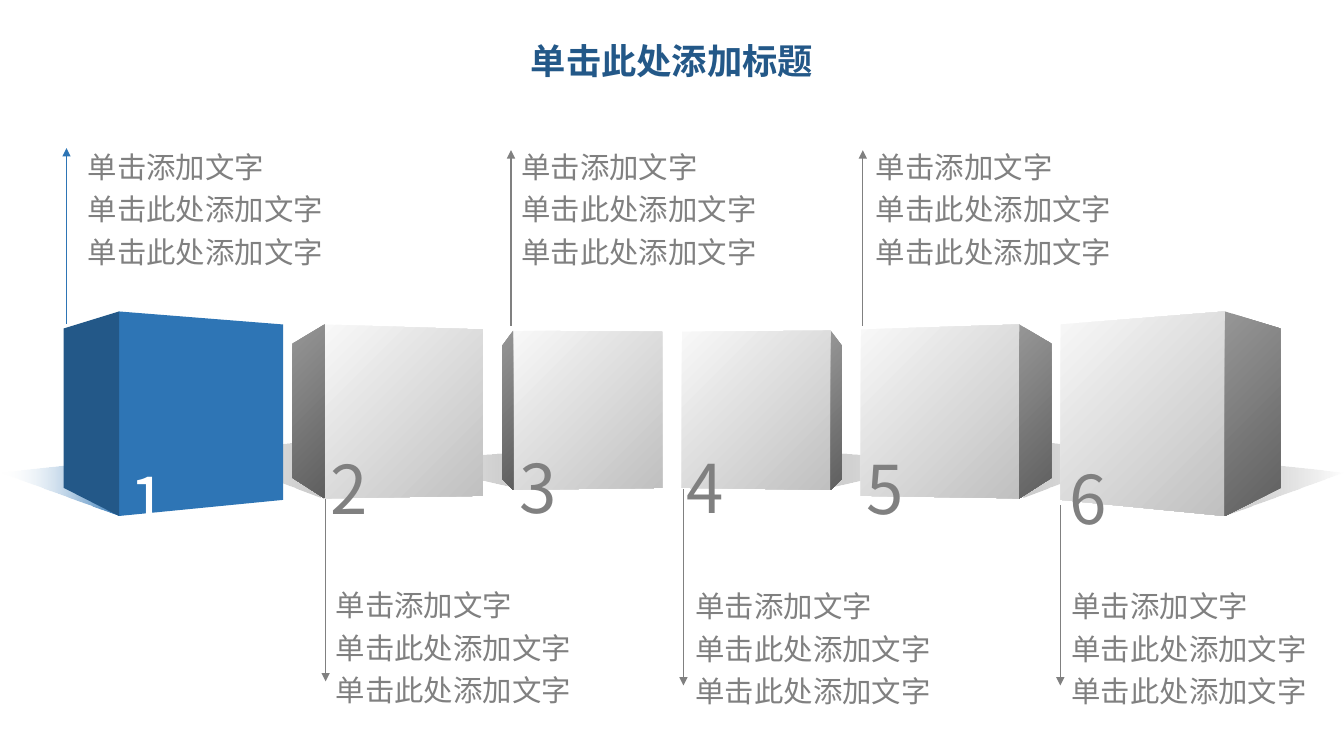
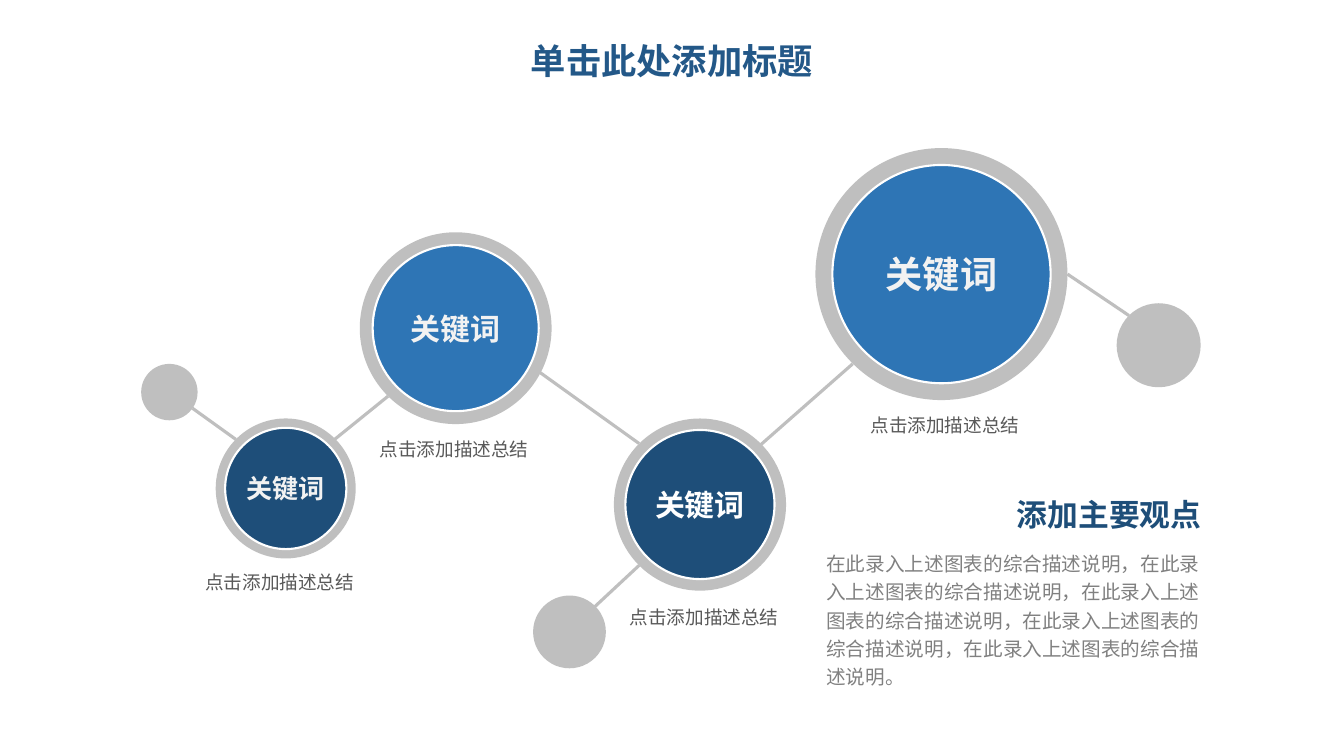
from dataclasses import dataclass
from typing import Any

import pptx
import pptx.dml.color
import pptx.enum.shapes
import pptx.enum.text
import pptx.oxml.ns
import pptx.util
from lxml import etree

Pt = pptx.util.Pt
qn = pptx.oxml.ns.qn
Align = pptx.enum.text.PP_ALIGN
Anchor = pptx.enum.text.MSO_ANCHOR
WIDTH, HEIGHT = 960, 540


@dataclass(frozen=True)
class Theme:
    # Colours
    title: str = "235888"
    blue: str = "2E75B5"
    navy: str = "1E4E79"
    grey: str = "808080"
    caption: str = "595959"
    ring: str = "BFBFBF"
    pale: str = "F2F2F2"
    white: str = "FFFFFF"
    # Gradients: pairs of colour and opacity in percent
    front: tuple = (("F8F8F8", 100), ("C0C0C0", 100))
    side: tuple = (("969696", 100), ("5F5F5F", 100))
    shadow: tuple = (("FFFFFF", 50), ("666666", 34))
    blue_shadow: tuple = (("FFFFFF", 0), ("2E75B5", 100))
    # Fonts and type sizes
    title_font: str = "Montserrat"
    font: str = "Noto Sans CJK SC"
    title_size: float = 25.2
    callout_size: float = 21
    digit_size: float = 48
    caption_size: float = 13.3
    heading_size: float = 22
    body_size: float = 14


THEME = Theme()


def rgb(color):
    return pptx.dml.color.RGBColor.from_string(color)


@dataclass
class Deck:
    presentation: Any
    theme: Theme
    slide: Any = None

    def new_slide(self, title):
        layout = self.presentation.slide_layouts.get_by_name("Title Only")
        self.slide = self.presentation.slides.add_slide(layout)
        shape = self.slide.shapes.title
        shape.left, shape.top, shape.width, shape.height = map(Pt, (66, 26, 828, 37.5))
        self.set_text(shape.text_frame, [title], self.theme.title_size, self.theme.title,
                      bold=True, align=Align.CENTER, spacing=0.9, anchor=Anchor.MIDDLE,
                      font=self.theme.title_font)

    def set_text(self, frame, lines, size, color, bold=False, align=Align.LEFT, spacing=1.0,
                 anchor=Anchor.TOP, insets=(7.2, 3.6), wrap=True, font=None):
        frame.word_wrap = wrap
        frame.auto_size = pptx.enum.text.MSO_AUTO_SIZE.NONE
        frame.vertical_anchor = anchor
        frame.margin_left = frame.margin_right = Pt(insets[0])
        frame.margin_top = frame.margin_bottom = Pt(insets[1])
        for index, line in enumerate(lines):
            paragraph = frame.add_paragraph() if index else frame.paragraphs[0]
            paragraph.alignment = align
            paragraph.line_spacing = spacing
            paragraph.space_before = Pt(0)
            run = paragraph.add_run()
            run.text = line
            run.font.size = Pt(size)
            run.font.bold = bold
            run.font.color.rgb = rgb(color)
            run.font.name = font or self.theme.font
            east_asian = etree.SubElement(run.font._element, qn("a:ea"))
            east_asian.set("typeface", self.theme.font)

    def text(self, left, top, width, height, lines, size, color, **style):
        box = self.slide.shapes.add_textbox(*map(Pt, (left, top, width, height)))
        self.set_text(box.text_frame, lines, size, color, **style)

    def paint(self, shape, fill, angle=45):
        """Fill with a colour, or with a gradient at a clockwise angle."""
        shape.shadow.inherit = False
        shape.line.fill.background()
        if isinstance(fill, str):
            shape.fill.solid()
            shape.fill.fore_color.rgb = rgb(fill)
            return
        shape.fill.gradient()
        shape.fill.gradient_angle = (360 - angle) % 360
        for stop, (color, opacity) in zip(shape.fill.gradient_stops, fill):
            stop.color.rgb = rgb(color)
        for element, (color, opacity) in zip(shape._element.spPr.iter(qn("a:srgbClr")), fill):
            if opacity < 100:
                etree.SubElement(element, qn("a:alpha")).set("val", str(opacity * 1000))

    def polygon(self, points, fill, angle=45):
        (start, *rest) = [(Pt(x), Pt(y)) for x, y in points]
        builder = self.slide.shapes.build_freeform(*start)
        builder.add_line_segments(rest, close=True)
        self.paint(builder.convert_to_shape(), fill, angle)

    def disc(self, center_x, center_y, diameter, fill):
        shape = self.slide.shapes.add_shape(
            pptx.enum.shapes.MSO_SHAPE.OVAL, Pt(center_x - diameter / 2),
            Pt(center_y - diameter / 2), Pt(diameter), Pt(diameter))
        self.paint(shape, fill)
        return shape

    def line(self, start, end, color, width, arrow=False):
        connector = self.slide.shapes.add_connector(
            pptx.enum.shapes.MSO_CONNECTOR.STRAIGHT, *map(Pt, (*start, *end)))
        connector.line.color.rgb = rgb(color)
        connector.line.width = Pt(width)
        properties = connector._element.spPr
        if arrow:
            tip = etree.SubElement(properties.find(qn("a:ln")), qn("a:tailEnd"))
            tip.set("type", "triangle")
        etree.SubElement(properties, qn("a:effectLst"))

    def cube(self, edge, front, side, shadow, mirrored, highlighted):
        """Draw a cube from its upright edges (x, top, bottom)."""
        theme = self.theme

        def place(points):
            return [(WIDTH - x if mirrored else x, y) for x, y in points]

        def face(far):
            return place([(edge[0], edge[1]), (edge[0], edge[2]),
                          (far[0], far[2]), (far[0], far[1])])

        self.polygon(place(shadow), theme.blue_shadow if highlighted else theme.shadow,
                     180 if mirrored else 0)
        self.polygon(face(front), theme.blue if highlighted else theme.front)
        self.polygon(face(side), theme.title if highlighted else theme.side)

    def callout(self, left, top, arrow_x, base, tip, color):
        self.text(left, top, 200.2, 98.6,
                  ["单击添加文字", "单击此处添加文字", "单击此处添加文字"],
                  self.theme.callout_size, self.theme.grey, spacing=1.2, insets=(9.4, 5))
        self.line((arrow_x, base), (arrow_x, tip), color, 1, arrow=True)

    def keyword(self, center_x, center_y, diameter, fill, size, color):
        self.disc(center_x, center_y, diameter, self.theme.ring)
        inner = self.disc(center_x, center_y, diameter * 0.866, fill)
        inner.line.color.rgb = rgb(self.theme.white)
        inner.line.width = Pt(1.5)
        self.set_text(inner.text_frame, ["关键词"], size, color, bold=True,
                      align=Align.CENTER, anchor=Anchor.MIDDLE, insets=(0, 0), wrap=False)


def build_cubes(deck):
    theme = deck.theme
    deck.new_slide("单击此处添加标题")

    # Callouts: text left, text top, arrow x, arrow base, arrow tip
    callouts = [
        (53.3, 96.5, 47.5, 231.1, 105.8),
        (230.4, 409.7, 232.6, 356.4, 486.7),
        (362.9, 96.5, 365, 232.6, 107.3),
        (487.4, 410.4, 488.2, 349.2, 489.6),
        (616.3, 96.5, 616.3, 232.6, 107.3),
        (756, 410.4, 757.4, 360.7, 489.6),
    ]
    for index, callout in enumerate(callouts):
        deck.callout(*callout, theme.grey if index else theme.blue)

    # Left-hand cubes from the middle outwards, each with its mirror image
    cubes = [
        ((366.5, 236.2, 349.9), (473, 236.9, 348.5), (358.6, 247, 342),
         [(370, 349.2), (281.5, 329), (360, 324)]),
        ((231.8, 231.8, 356), (345, 235.4, 354.2), (208.9, 245.5, 341.3),
         [(229, 355.5), (144.5, 323.6), (219.5, 315.5)]),
        ((85, 222.5, 368.6), (202.3, 231.8, 357.1), (45.4, 234.7, 348.5),
         [(84.4, 368.3), (0.5, 338), (74, 330)]),
    ]
    for cube in cubes:
        for mirrored in (False, True):
            deck.cube(*cube, mirrored, highlighted=cube is cubes[-1] and not mirrored)

    # Numbers: centre and top
    numbers = [(105.8, 324.7), (249.5, 316), (384.1, 315.4),
               (503.6, 315.4), (632.5, 316), (777.2, 323.3)]
    for number, (center, top) in enumerate(numbers, 1):
        deck.text(center - 9, top, 18, 29.5, [str(number)], theme.digit_size,
                  theme.white if number == 1 else theme.grey,
                  align=Align.CENTER, wrap=False)


def build_keywords(deck):
    theme = deck.theme
    deck.new_slide("单击此处添加标题")

    # Keyword circles: centre, diameter, fill, type size, text colour
    for keyword in [
        (204.1, 348.9, 100, theme.navy, 18.6, theme.pale),
        (325.5, 234.4, 137, theme.blue, 21.4, theme.pale),
        (500, 360.4, 123, theme.navy, 21.4, theme.white),
        (672.5, 195.8, 180, theme.blue, 26.6, theme.pale),
    ]:
        deck.keyword(*keyword)

    # Links between circles
    for start, end in [
        ((239, 313.9), (277.2, 283)), ((385.2, 265.7), (456.5, 316.8)),
        ((543.6, 317.5), (609.1, 259.9)), ((137.5, 291.6), (168.5, 313.9)),
        ((424.8, 433.4), (456.5, 403.9)), ((762.5, 195.8), (806.4, 225.4)),
    ]:
        deck.line(start, end, theme.ring, 2.25)

    # Captions
    for left, top in [(128.2, 400.3), (252.7, 306), (431.3, 425.5), (603.4, 288.7)]:
        deck.text(left, top, 143.3, 25.9, ["点击添加描述总结"], theme.caption_size,
                  theme.caption, align=Align.CENTER, spacing=Pt(18.8), insets=(8.6, 4.3))

    # Summary
    deck.text(623.5, 349.9, 244, 36, ["添加主要观点"], theme.heading_size, theme.navy,
              bold=True, align=Align.RIGHT, insets=(9.4, 4.3))
    sentence = "在此录入上述图表的综合描述说明"
    deck.text(583.2, 387.4, 288, 108.7, ["，".join([sentence] * 5) + "。"],
              theme.body_size, theme.grey, spacing=1.2)

    # Plain end discs
    for center_x, center_y, diameter in [(121, 280.1, 40.3), (406.8, 451.4, 52),
                                         (827.6, 246.6, 60)]:
        deck.disc(center_x, center_y, diameter, theme.ring)


def main():
    presentation = pptx.Presentation()
    presentation.slide_width, presentation.slide_height = Pt(WIDTH), Pt(HEIGHT)
    deck = Deck(presentation, THEME)
    build_cubes(deck)
    build_keywords(deck)
    presentation.save("out.pptx")


if __name__ == "__main__":
    main()
